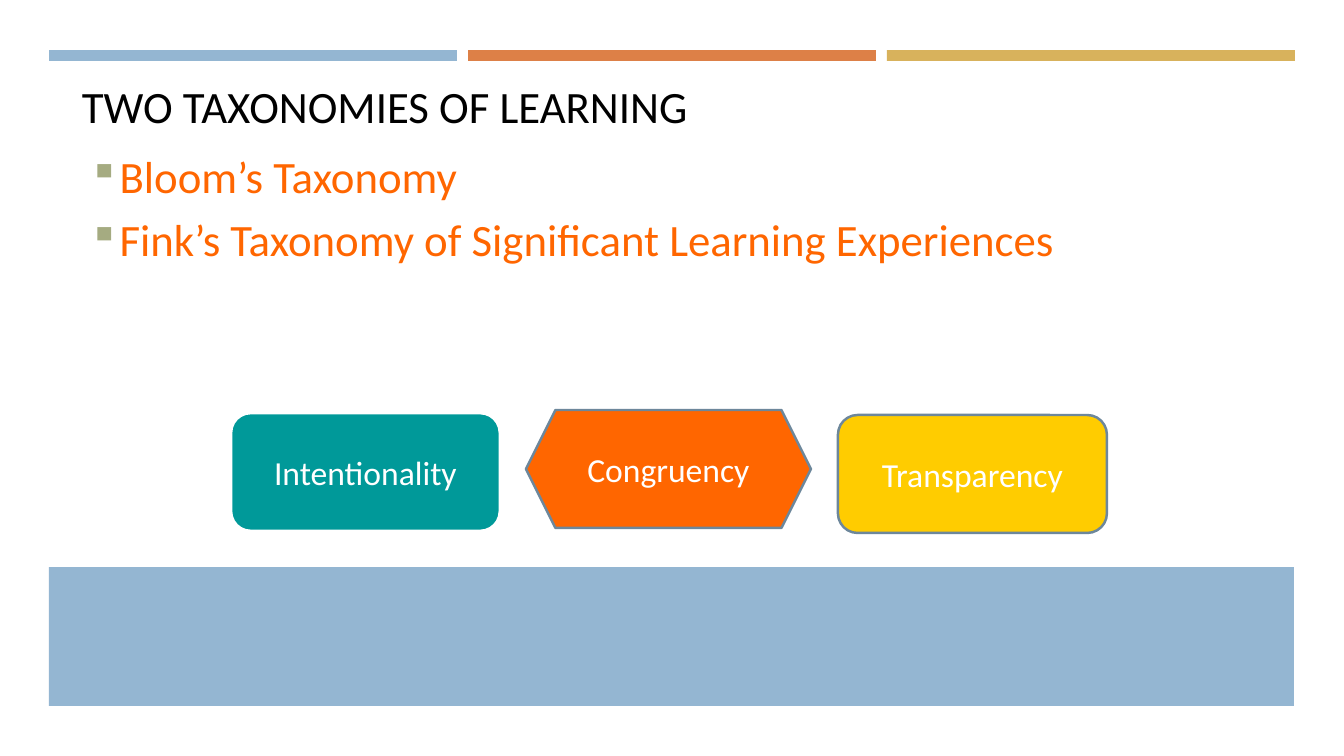
from dataclasses import dataclass
from lxml import etree
from pptx import Presentation
from pptx.dml.color import RGBColor
from pptx.enum.shapes import MSO_SHAPE as Preset
from pptx.enum.text import MSO_ANCHOR as Anchor, PP_ALIGN as Align
from pptx.oxml.ns import qn
from pptx.util import Pt

PX = 914400 / 100.8


@dataclass(frozen=True)
class Theme:
    font: str = "Calibri"
    heading_size: int = 32
    label_size: int = 24
    blue: str = "94B6D2"
    rust: str = "DD8047"
    gold: str = "D8B25C"
    sage: str = "A5AB81"
    slate: str = "6D879B"
    teal: str = "009999"
    orange: str = "FF6600"
    yellow: str = "FFCC00"
    black: str = "000000"
    white: str = "FFFFFF"


theme = Theme()


def add_filled(preset, box, fill):
    shape = slide.shapes.add_shape(preset, *(round(value * PX) for value in box))
    shape.shadow.inherit = False
    shape.fill.solid()
    shape.fill.fore_color.rgb = RGBColor.from_string(fill)
    shape.line.fill.background()
    return shape


def write(paragraph, text, size, color):
    paragraph.text = text
    paragraph.font.name = theme.font
    paragraph.font.size = Pt(size)
    paragraph.font.color.rgb = RGBColor.from_string(color)


presentation = Presentation()
presentation.slide_width = round(1344 * PX)
presentation.slide_height = round(756 * PX)
slide = presentation.slides.add_slide(presentation.slide_layouts[6])

# Three bars along the top and the band at the foot
for column, color in enumerate((theme.blue, theme.rust, theme.gold)):
    add_filled(Preset.RECTANGLE, (49 + column * 419, 50, 408, 11), color)
add_filled(Preset.RECTANGLE, (49, 567, 1245, 139), theme.blue)

# Title
title = slide.shapes.add_textbox(*(round(value * PX) for value in (72, 74, 849, 65)))
title.text_frame.word_wrap = True
write(title.text_frame.paragraphs[0], "TWO TAXONOMIES OF LEARNING", theme.heading_size, theme.black)

# Bulleted taxonomies
body = slide.shapes.add_textbox(*(round(value * PX) for value in (8, 144, 1280, 182)))
body.text_frame.word_wrap = True
taxonomies = ("Bloom’s Taxonomy", "Fink’s Taxonomy of Significant Learning Experiences")
for index, taxonomy in enumerate(taxonomies):
    paragraph = body.text_frame.add_paragraph() if index else body.text_frame.paragraphs[0]
    write(paragraph, taxonomy, theme.heading_size, theme.orange)
    if index:
        paragraph.space_before = Pt(6.4)
    properties = paragraph._p.get_or_add_pPr()
    properties.set("marL", str(round(71 * PX)))
    properties.set("indent", "0")
    bullet_color = etree.Element(qn("a:buClr"))
    etree.SubElement(bullet_color, qn("a:srgbClr"), val=theme.sage)
    bullet_size = etree.Element(qn("a:buSzPct"), val="92000")
    bullet = etree.Element(qn("a:buChar"), char="▪")
    # Bullet settings come before the default run properties
    for element in (bullet_color, bullet_size, bullet):
        properties.find(qn("a:defRPr")).addprevious(element)

# Three principles
principles = (
    ("Intentionality", Preset.ROUNDED_RECTANGLE, (231, 413, 269, 118), theme.teal, theme.white, 2),
    ("Congruency", Preset.HEXAGON, (526, 410, 285, 118), theme.orange, theme.slate, 1.75),
    ("Transparency", Preset.ROUNDED_RECTANGLE, (838, 415, 269, 118), theme.yellow, theme.slate, 1.75),
)
for label, preset, box, fill, outline, width in principles:
    shape = add_filled(preset, box, fill)
    shape.line.color.rgb = RGBColor.from_string(outline)
    shape.line.width = Pt(width)
    shape.text_frame.vertical_anchor = Anchor.MIDDLE
    paragraph = shape.text_frame.paragraphs[0]
    paragraph.alignment = Align.CENTER
    write(paragraph, label, theme.label_size, theme.white)

presentation.save("out.pptx")
